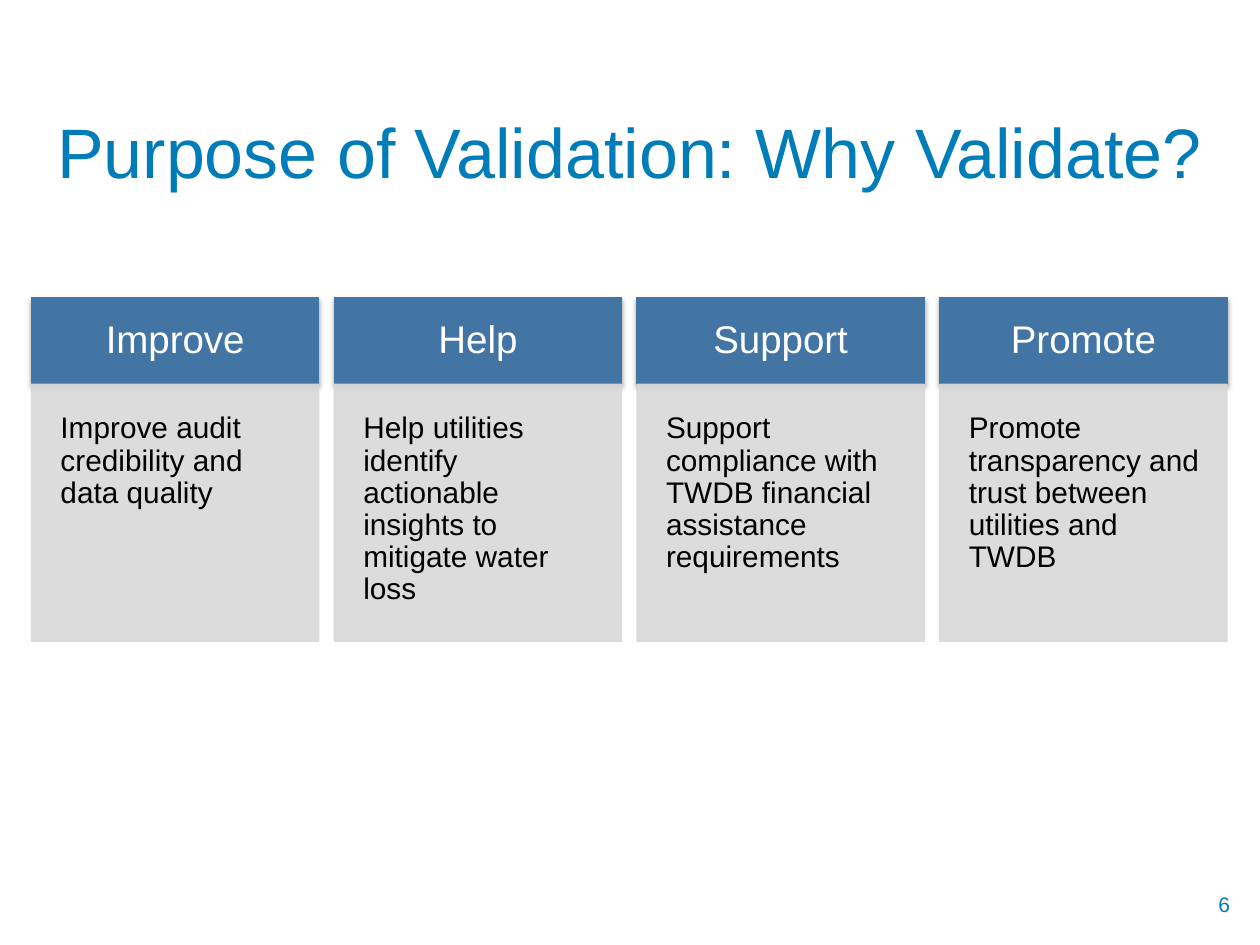
from lxml import etree
from pptx import Presentation
from pptx.dml.color import RGBColor
from pptx.enum.shapes import MSO_SHAPE as Shape
from pptx.enum.text import MSO_ANCHOR as Anchor, PP_ALIGN as Align
from pptx.oxml import parse_xml
from pptx.oxml.ns import nsdecls, qn
from pptx.util import Inches, Pt

TITLE_BLUE, HEADER_BLUE, BODY_GRAY = "007DB8", "4375A4", "D9D9D9"
COLUMN_LEFT, COLUMN_STEP, COLUMN_WIDTH = 0.25, 2.403, 2.28
HEADER_TOP, HEADER_HEIGHT, BODY_HEIGHT = 2.36, 0.69, 2.04

columns = [
    ("Improve", "Improve audit credibility and data quality"),
    ("Help", "Help utilities identify actionable insights to mitigate water loss"),
    ("Support", "Support compliance with TWDB financial assistance requirements"),
    ("Promote", "Promote transparency and trust between utilities and TWDB"),
]


def write(shape, text, size, color, align, anchor, insets=(0.1, 0.05, 0.1, 0.05), spacing=1.0):
    """Put one Arial paragraph in a shape; insets are left, top, right, bottom in inches."""
    frame = shape.text_frame
    frame.word_wrap = True
    frame.vertical_anchor = anchor
    frame.margin_left, frame.margin_top, frame.margin_right, frame.margin_bottom = map(Inches, insets)
    paragraph = frame.paragraphs[0]
    paragraph.alignment = align
    paragraph.line_spacing = spacing
    run = paragraph.add_run()
    run.text = text
    run.font.name = "Arial"
    run.font.size = Pt(size)
    run.font.color.rgb = RGBColor.from_string(color)


def add_panel(top, height, color):
    """Add a rectangle without a shadow at the current column."""
    panel = slide.shapes.add_shape(
        Shape.RECTANGLE, Inches(left), Inches(top), Inches(COLUMN_WIDTH), Inches(height))
    panel.shadow.inherit = False
    panel.fill.solid()
    panel.fill.fore_color.rgb = RGBColor.from_string(color)
    panel.line.color.rgb = RGBColor.from_string(color)
    panel.line.width = Pt(0.75)
    return panel


presentation = Presentation()
presentation.slide_width, presentation.slide_height = Inches(10), Inches(7.5)
slide = presentation.slides.add_slide(presentation.slide_layouts[6])

title = slide.shapes.add_textbox(Inches(0.24), Inches(0.22), Inches(9.51), Inches(1.95))
write(title, "Purpose of Validation: Why Validate?", 40, TITLE_BLUE, Align.CENTER, Anchor.MIDDLE)

page_number = slide.shapes.add_textbox(Inches(7.82), Inches(7), Inches(2.04), Inches(0.35))
write(page_number, "6", 12, TITLE_BLUE, Align.RIGHT, Anchor.MIDDLE)

for index, (heading, purpose) in enumerate(columns):
    left = COLUMN_LEFT + index * COLUMN_STEP

    header = add_panel(HEADER_TOP, HEADER_HEIGHT, HEADER_BLUE)
    write(header, heading, 22, "FFFFFF", Align.CENTER, Anchor.MIDDLE, (0.18,) * 4, 0.9)
    effects = header._element.spPr.find(qn("a:effectLst"))
    effects.append(parse_xml(
        f'<a:outerShdw {nsdecls("a")} blurRad="{Pt(3.1)}" dist="{Pt(1.8)}" dir="5400000" rotWithShape="0">'
        '<a:srgbClr val="000000"><a:alpha val="35000"/></a:srgbClr></a:outerShdw>'))

    body = add_panel(HEADER_TOP + HEADER_HEIGHT, BODY_HEIGHT, BODY_GRAY)
    for color_element in body._element.spPr.iter(qn("a:srgbClr")):
        etree.SubElement(color_element, qn("a:alpha"), val="90000")
    write(body, purpose, 17, "000000", Align.LEFT, Anchor.TOP, (0.23, 0.23, 0.2, 0.23), 0.9)

presentation.save("out.pptx")
